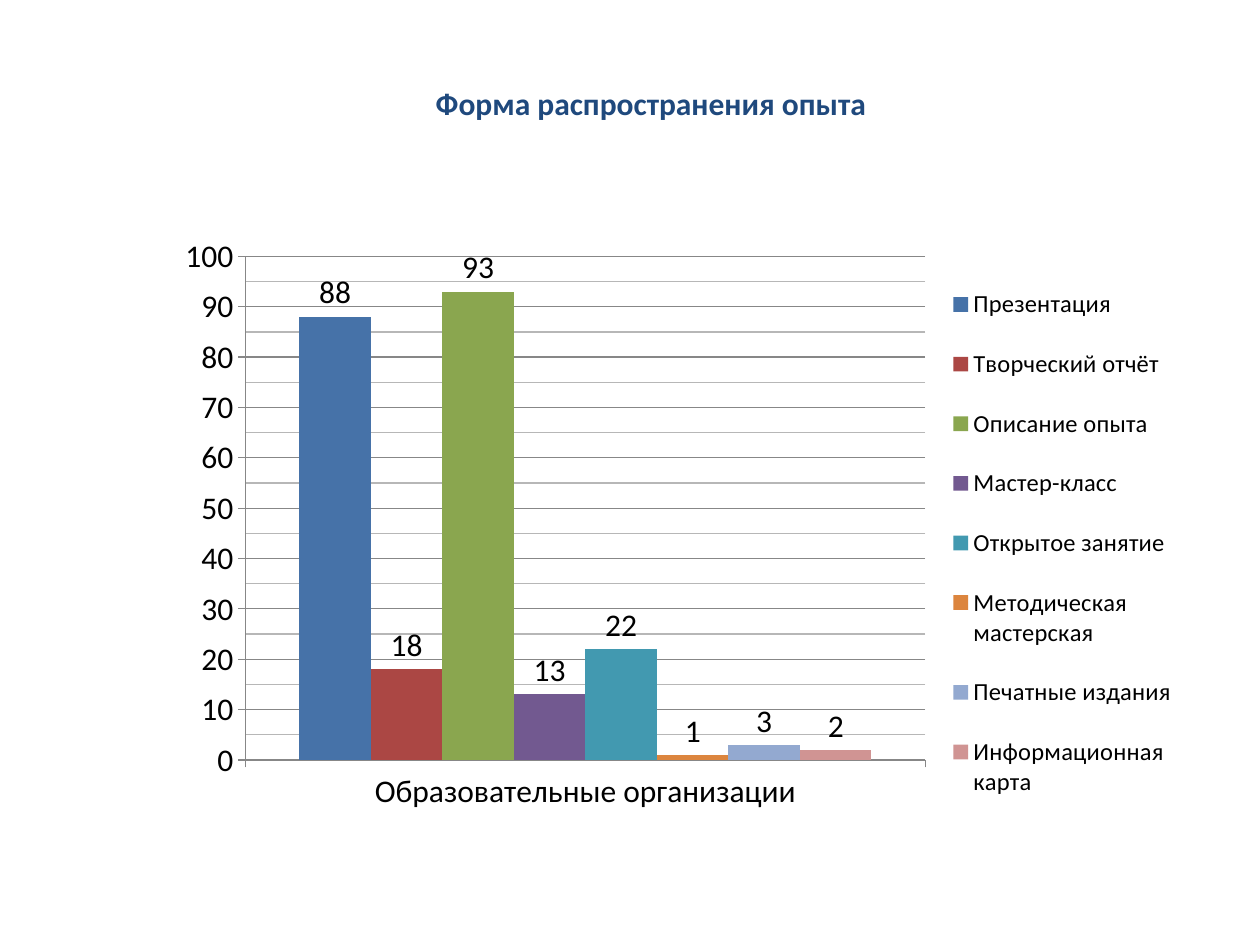
import pptx
import pptx.chart.data
import pptx.dml.color
import pptx.enum.chart
import pptx.enum.text
import pptx.oxml
import pptx.oxml.ns
import pptx.util

Inches = pptx.util.Inches
COLORS = {
    "title": "1F497D",
    "text": "000000",
    "axis": "878787",
    "minor": "B7B7B7",
    "Презентация": "4672A8",
    "Творческий отчёт": "AB4744",
    "Описание опыта": "8AA64F",
    "Мастер-класс": "725990",
    "Открытое занятие": "4299B0",
    "Методическая мастерская": "DC853E",
    "Печатные издания": "93A9D0",
    "Информационная карта": "D09493",
}
COUNTS = {
    "Презентация": 88,
    "Творческий отчёт": 18,
    "Описание опыта": 93,
    "Мастер-класс": 13,
    "Открытое занятие": 22,
    "Методическая мастерская": 1,
    "Печатные издания": 3,
    "Информационная карта": 2,
}


class SlideBuilder:
    """Holds the style and the current slide."""

    font_name = "Calibri"

    def __init__(self, slide):
        self.slide = slide

    def color(self, key):
        return pptx.dml.color.RGBColor.from_string(COLORS[key])

    def style_font(self, font, size, key, bold=False):
        font.name = self.font_name
        font.size = pptx.util.Pt(size)
        font.bold = bold
        font.color.rgb = self.color(key)

    def style_line(self, line, key):
        line.color.rgb = self.color(key)
        line.width = pptx.util.Pt(0.75)

    def add_title(self, text, left, top, width, height):
        box = self.slide.shapes.add_textbox(left, top, width, height)
        frame = box.text_frame
        frame.text = text
        frame.word_wrap = False
        frame.auto_size = pptx.enum.text.MSO_AUTO_SIZE.SHAPE_TO_FIT_TEXT
        self.style_font(frame.paragraphs[0].runs[0].font, 18, "title", True)

    def set_layout(self, element, bounds, inner=False):
        layout = element.find(pptx.oxml.ns.qn("c:layout"))
        if layout is not None:
            element.remove(layout)
        target = '<c:layoutTarget val="inner"/>' if inner else ""
        modes = "".join(f'<c:{side}Mode val="edge"/>' for side in "xy")
        sizes = "".join(f'<c:{side} val="{value}"/>' for side, value in zip("xywh", bounds))
        layout = pptx.oxml.parse_xml(
            f'<c:layout {pptx.oxml.ns.nsdecls("c")}><c:manualLayout>'
            f"{target}{modes}{sizes}</c:manualLayout></c:layout>"
        )
        element.insert(0 if inner else 1, layout)

    def add_columns(self, category, counts, left, top, width, height):
        data = pptx.chart.data.CategoryChartData()
        data.categories = [category]
        for name, count in counts.items():
            data.add_series(name, [count])
        kind = pptx.enum.chart.XL_CHART_TYPE.COLUMN_CLUSTERED
        chart = self.slide.shapes.add_chart(kind, left, top, width, height, data).chart
        chart.has_title = False
        self.style_font(chart.font, 18, "text")
        self.style_series(chart.plots[0])
        self.style_axes(chart)
        self.style_legend(chart)
        plot_area = chart.plots[0]._element.getparent()
        self.set_layout(plot_area, (0.135, 0.034, 0.622, 0.826), inner=True)

    def style_series(self, plot):
        plot.vary_by_categories = False
        plot.gap_width = 150
        plot.overlap = 0
        for series in plot.series:
            series.format.fill.solid()
            series.format.fill.fore_color.rgb = self.color(series.name)
            labels = series.data_labels
            labels.show_value = True
            labels.position = pptx.enum.chart.XL_LABEL_POSITION.OUTSIDE_END
            self.style_font(labels.font, 18, "text")

    def style_axes(self, chart):
        for axis in (chart.category_axis, chart.value_axis):
            axis.major_tick_mark = pptx.enum.chart.XL_TICK_MARK.OUTSIDE
            axis.minor_tick_mark = pptx.enum.chart.XL_TICK_MARK.NONE
            self.style_line(axis.format.line, "axis")
            self.style_font(axis.tick_labels.font, 18, "text")
        scale = chart.value_axis
        scale.minimum_scale, scale.maximum_scale = 0, 100
        scale.major_unit, scale.minor_unit = 10, 5
        scale.has_major_gridlines = scale.has_minor_gridlines = True
        self.style_line(scale.major_gridlines.format.line, "axis")
        self.style_minor_gridlines(scale)

    def style_minor_gridlines(self, scale):
        gridlines = scale._element.find(pptx.oxml.ns.qn("c:minorGridlines"))
        gridlines.append(pptx.oxml.parse_xml(
            f'<c:spPr {pptx.oxml.ns.nsdecls("c", "a")}><a:ln w="{pptx.util.Pt(0.75)}">'
            f'<a:solidFill><a:srgbClr val="{COLORS["minor"]}"/></a:solidFill></a:ln></c:spPr>'
        ))

    def style_legend(self, chart):
        chart.has_legend = True
        legend = chart.legend
        legend.position = pptx.enum.chart.XL_LEGEND_POSITION.RIGHT
        legend.include_in_layout = False
        self.style_font(legend.font, 14, "text")
        self.set_layout(legend._element, (0.775, 0.04, 0.215, 0.93))


def main():
    deck = pptx.Presentation()
    deck.slide_width, deck.slide_height = Inches(10), Inches(7.5)
    builder = SlideBuilder(deck.slides.add_slide(deck.slide_layouts[6]))
    builder.add_columns(
        "Образовательные организации", COUNTS,
        Inches(0.78), Inches(1.87), Inches(8.67), Inches(4.84),
    )
    builder.add_title(
        "Форма распространения опыта",
        Inches(3.36), Inches(0.62), Inches(3.65), Inches(0.4),
    )
    deck.save("out.pptx")


if __name__ == "__main__":
    main()
